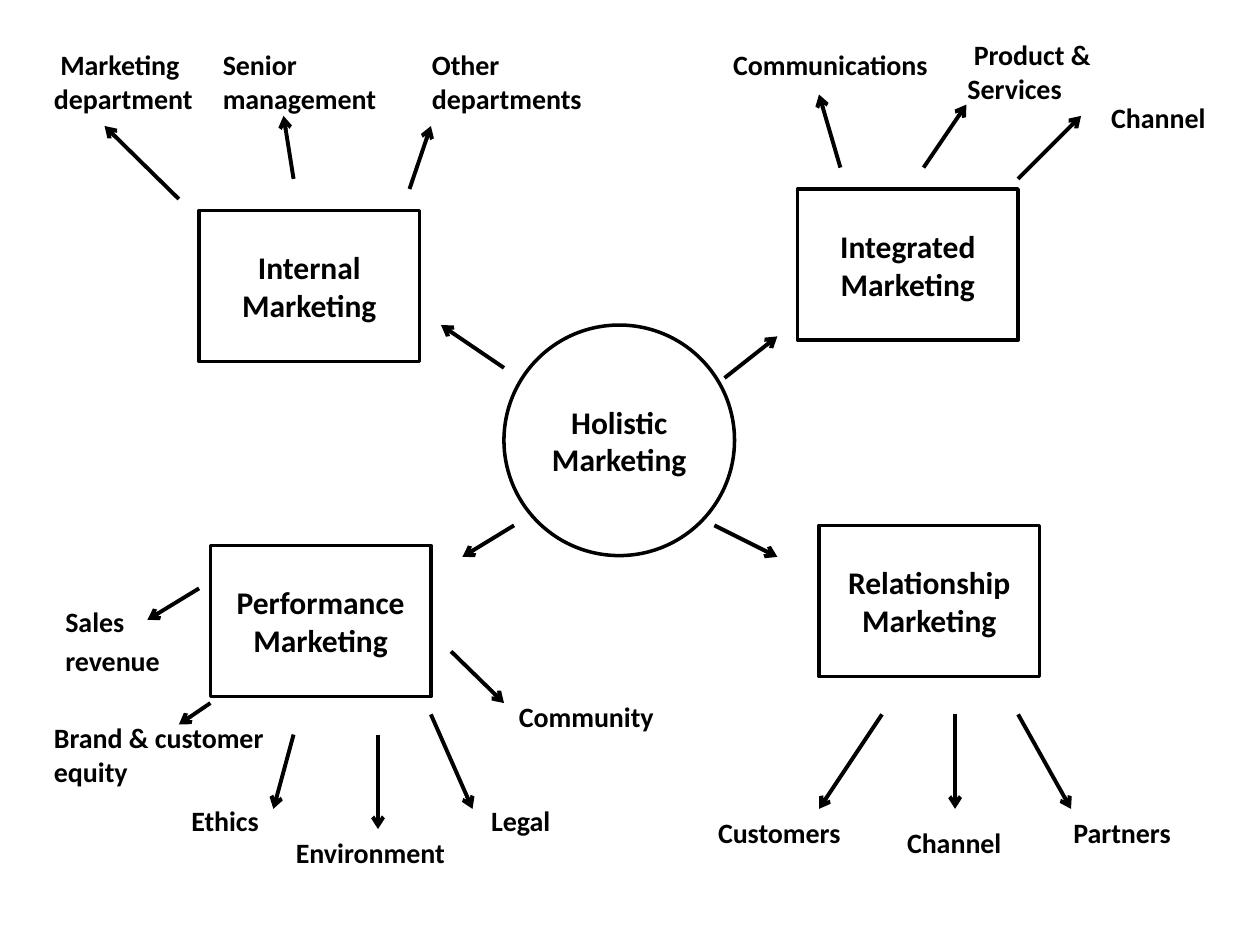
from dataclasses import dataclass

from lxml.etree import SubElement
from pptx import Presentation
from pptx.dml.color import RGBColor
from pptx.enum.shapes import MSO_CONNECTOR, MSO_SHAPE
from pptx.enum.text import MSO_ANCHOR, PP_ALIGN
from pptx.oxml.ns import qn
from pptx.slide import Slide
from pptx.util import Inches, Pt

FONT = "Calibri"
INK = "000000"
PAPER = "FFFFFF"
CIRCLE_SIZE = 1.83
BOX_WIDTH, BOX_HEIGHT = 1.75, 1.2
ONE_LINE, TWO_LINES = 0.37, 0.64
FIRST_LINE_INDENT = 0.05


@dataclass
class Component:
    """A main marketing concept, placed by its top left corner."""
    text: str
    left: float
    top: float
    width: float = BOX_WIDTH
    height: float = BOX_HEIGHT
    outline: MSO_SHAPE = MSO_SHAPE.RECTANGLE


@dataclass
class Label:
    """An outer topic, with one entry in lines for each paragraph."""
    lines: list[str]
    left: float
    top: float
    width: float
    height: float = ONE_LINE
    indent: float = 0
    gap: float = 0


@dataclass
class Arrow:
    """A line whose head is at its end point."""
    start: tuple[float, float]
    end: tuple[float, float]


COMPONENTS = [
    Component("Holistic Marketing", 4, 2.58, CIRCLE_SIZE, CIRCLE_SIZE, MSO_SHAPE.OVAL),
    Component("Internal Marketing", 1.58, 1.67),
    Component("Integrated Marketing", 6.33, 1.5),
    Component("Performance Marketing", 1.67, 4.33),
    Component("Relationship Marketing", 6.5, 4.17),
]

HOLISTIC_ARROWS = [
    Arrow((5.75, 3), (6.17, 2.67)),
    Arrow((4, 2.92), (3.5, 2.58)),
    Arrow((4.08, 4.17), (3.67, 4.42)),
    Arrow((5.67, 4.17), (6.17, 4.42)),
]
INTERNAL_ARROWS = [
    Arrow((1.42, 1.58), (0.83, 1)),
    Arrow((2.33, 1.42), (2.25, 0.92)),
    Arrow((3.25, 1.5), (3.42, 1)),
]
INTEGRATED_ARROWS = [
    Arrow((6.67, 1.33), (6.5, 0.75)),
    Arrow((7.33, 1.33), (7.67, 0.83)),
    Arrow((8.08, 1.42), (8.58, 0.92)),
]
PERFORMANCE_ARROWS = [
    Arrow((1.58, 4.67), (1.17, 4.92)),
    Arrow((1.67, 5.58), (1.42, 5.75)),
    Arrow((3, 5.83), (3, 6.58)),
    Arrow((3.42, 5.67), (3.75, 6.42)),
    Arrow((2.33, 5.83), (2.17, 6.42)),
    Arrow((3.58, 5.17), (4, 5.58)),
]
RELATIONSHIP_ARROWS = [
    Arrow((7, 5.67), (6.5, 6.42)),
    Arrow((7.58, 5.67), (7.58, 6.42)),
    Arrow((8.08, 5.67), (8.5, 6.42)),
]
ARROWS = (HOLISTIC_ARROWS + INTERNAL_ARROWS + INTEGRATED_ARROWS
          + PERFORMANCE_ARROWS + RELATIONSHIP_ARROWS)

LABELS = [
    Label(["Sales", "revenue"], 0.42, 4.75, 1.17, 0.75, gap=3.2),
    Label(["Brand & customer", "equity"], 0.33, 5.67, 1.92, 0.67),
    Label(["Ethics"], 1.42, 6.33, 1.08),
    Label(["Partners"], 8.42, 6.42, 0.99),
    Label(["Environment"], 2.25, 6.58, 1.4),
    Label(["Legal"], 3.8, 6.33, 0.73),
    Label(["Community"], 4.02, 5.5, 1.34),
    Label(["Customers"], 5.6, 6.42, 1.29),
    Label(["Channel"], 7.1, 6.5, 1.01),
    Label(["Channel"], 8.72, 0.75, 1.01),
    Label(["Product & Services"], 7.58, 0.25, 1.62, TWO_LINES, FIRST_LINE_INDENT),
    Label(["Communications"], 5.72, 0.33, 1.82),
    Label(["Marketing department"], 0.33, 0.33, 1.42, TWO_LINES, FIRST_LINE_INDENT),
    Label(["Senior management"], 1.67, 0.33, 1.5, TWO_LINES),
    Label(["Other departments"], 3.33, 0.33, 1.58, TWO_LINES),
]


def color(value: str) -> RGBColor:
    """Turn a hex string into a colour."""
    return RGBColor.from_string(value)


def add_run(paragraph, text: str, size: float) -> None:
    """Add a bold run in the diagram's typeface."""
    run = paragraph.add_run()
    run.text = text
    run.font.name = FONT
    run.font.size = Pt(size)
    run.font.bold = True
    run.font.color.rgb = color(INK)


def draw_component(slide: Slide, component: Component) -> None:
    """Draw an outlined shape with its centred concept."""
    shape = slide.shapes.add_shape(
        component.outline, Inches(component.left), Inches(component.top),
        Inches(component.width), Inches(component.height))
    shape.shadow.inherit = False
    shape.fill.solid()
    shape.fill.fore_color.rgb = color(PAPER)
    shape.line.color.rgb = color(INK)
    shape.line.width = Pt(2)
    frame = shape.text_frame
    frame.word_wrap = True
    frame.vertical_anchor = MSO_ANCHOR.MIDDLE
    paragraph = frame.paragraphs[0]
    paragraph.alignment = PP_ALIGN.CENTER
    add_run(paragraph, component.text, 18)


def draw_arrow(slide: Slide, arrow: Arrow) -> None:
    """Draw a straight line with an open arrowhead."""
    connector = slide.shapes.add_connector(
        MSO_CONNECTOR.STRAIGHT, *map(Inches, arrow.start + arrow.end))
    connector.line.color.rgb = color(INK)
    connector.line.width = Pt(2.25)
    SubElement(connector.line._get_or_add_ln(), qn("a:tailEnd"), type="arrow")
    SubElement(connector._element.spPr, qn("a:effectLst"))


def draw_label(slide: Slide, label: Label) -> None:
    """Draw a left-aligned topic."""
    box = slide.shapes.add_textbox(
        Inches(label.left), Inches(label.top), Inches(label.width), Inches(label.height))
    frame = box.text_frame
    frame.word_wrap = True
    for number, line in enumerate(label.lines):
        paragraph = frame.add_paragraph() if number else frame.paragraphs[0]
        if number:
            paragraph.space_before = Pt(label.gap)
        if label.indent:
            paragraph._p.get_or_add_pPr().set("indent", str(Inches(label.indent)))
        add_run(paragraph, line, 16)


def main() -> None:
    """Build the holistic marketing diagram."""
    deck = Presentation()
    deck.slide_width, deck.slide_height = Inches(10), Inches(7.5)
    slide = deck.slides.add_slide(deck.slide_layouts[6])
    for component in COMPONENTS:
        draw_component(slide, component)
    for arrow in ARROWS:
        draw_arrow(slide, arrow)
    for label in LABELS:
        draw_label(slide, label)
    deck.save("out.pptx")


if __name__ == "__main__":
    main()
